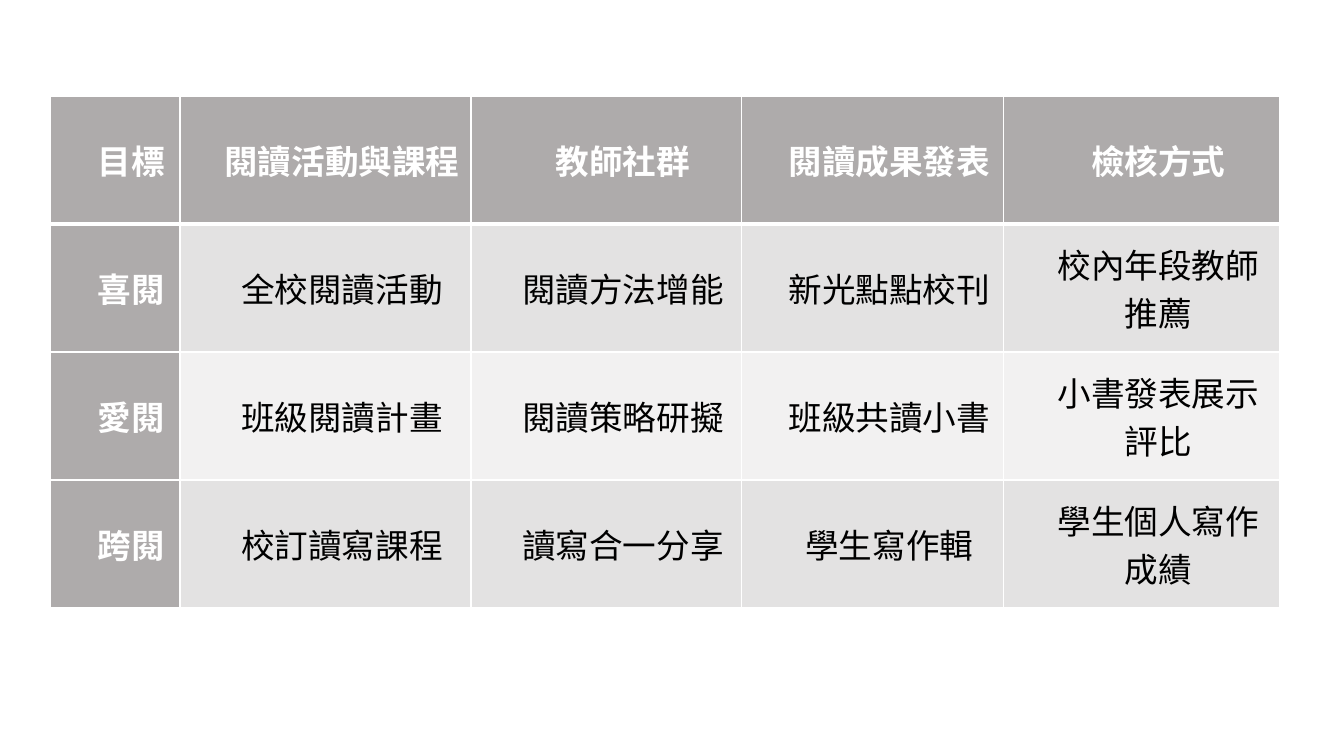
from lxml.etree import SubElement
from pptx import Presentation
from pptx.dml.color import RGBColor
from pptx.enum.text import MSO_ANCHOR, PP_ALIGN
from pptx.oxml import parse_xml
from pptx.oxml.ns import nsdecls, qn
from pptx.util import Emu, Pt

WHITE = RGBColor(0xFF, 0xFF, 0xFF)
BLACK = RGBColor(0, 0, 0)
HEADER_GRAY = RGBColor(0xAE, 0xAB, 0xAB)
BAND_DARK = RGBColor(0xE3, 0xE2, 0xE2)
BAND_LIGHT = RGBColor(0xF2, 0xF1, 0xF1)

COLUMN_WIDTHS = [130, 291, 271, 262, 276]
ROW_HEIGHT = 128
READING_PLAN = [
    ["目標", "閱讀活動與課程", "教師社群", "閱讀成果發表", "檢核方式"],
    ["喜閱", "全校閱讀活動", "閱讀方法增能", "新光點點校刊", "校內年段教師推薦"],
    ["愛閱", "班級閱讀計畫", "閱讀策略研擬", "班級共讀小書", "小書發表展示評比"],
    ["跨閱", "校訂讀寫課程", "讀寫合一分享", "學生寫作輯", "學生個人寫作成績"],
]


def px(n):
    return Emu(round(n * 914400 / 100.8))


class SlideBuilder:
    font_name = "Noto Sans CJK SC"
    font_size = Pt(24)
    cell_margin = px(7)
    text_indent = px(33)

    def __init__(self, slide):
        self.slide = slide

    def table(self, rows, left, top, widths, row_height):
        frame = self.slide.shapes.add_table(
            len(rows), len(widths), px(left), px(top),
            px(sum(widths)), px(row_height * len(rows)))
        table = frame.table
        for column, width in zip(table.columns, widths):
            column.width = px(width)
        for i, texts in enumerate(rows):
            table.rows[i].height = px(row_height)
            for j, text in enumerate(texts):
                is_header = i == 0 or j == 0
                band = BAND_DARK if i % 2 else BAND_LIGHT
                cell = table.cell(i, j)
                self.cell(cell, text, HEADER_GRAY if is_header else band, is_header)
                self.borders(cell, L=1, R=1, T=3 if i == 1 else 1, B=3 if i == 0 else 1)

    def cell(self, cell, text, fill, is_header):
        cell.fill.solid()
        cell.fill.fore_color.rgb = fill
        cell.vertical_anchor = MSO_ANCHOR.MIDDLE
        cell.margin_left = cell.margin_right = self.cell_margin
        cell.margin_top = cell.margin_bottom = 0
        cell.text_frame.text = text
        p = cell.text_frame.paragraphs[0]
        p.alignment = PP_ALIGN.CENTER
        pPr = p._p.get_or_add_pPr()
        pPr.set("marL", str(self.text_indent))
        pPr.set("indent", "0")
        r = p.runs[0]
        r.font.size = self.font_size
        r.font.bold = is_header
        r.font.color.rgb = WHITE if is_header else BLACK
        r.font.name = self.font_name
        SubElement(r._r.get_or_add_rPr(), qn("a:ea")).set("typeface", self.font_name)

    def borders(self, cell, **points):
        """Draw white borders; points maps the sides L, R, T, B to line widths."""
        tcPr = cell._tc.get_or_add_tcPr()
        for k, side in enumerate("LRTB"):
            tcPr.insert(k, parse_xml(
                f'<a:ln{side} {nsdecls("a")} w="{Pt(points[side])}">'
                f'<a:solidFill><a:srgbClr val="{WHITE}"/></a:solidFill></a:ln{side}>'))


def main():
    prs = Presentation()
    prs.slide_width, prs.slide_height = px(1344), px(756)
    builder = SlideBuilder(prs.slides.add_slide(prs.slide_layouts[6]))
    builder.table(READING_PLAN, 50, 96, COLUMN_WIDTHS, ROW_HEIGHT)
    prs.save("out.pptx")


if __name__ == "__main__":
    main()
